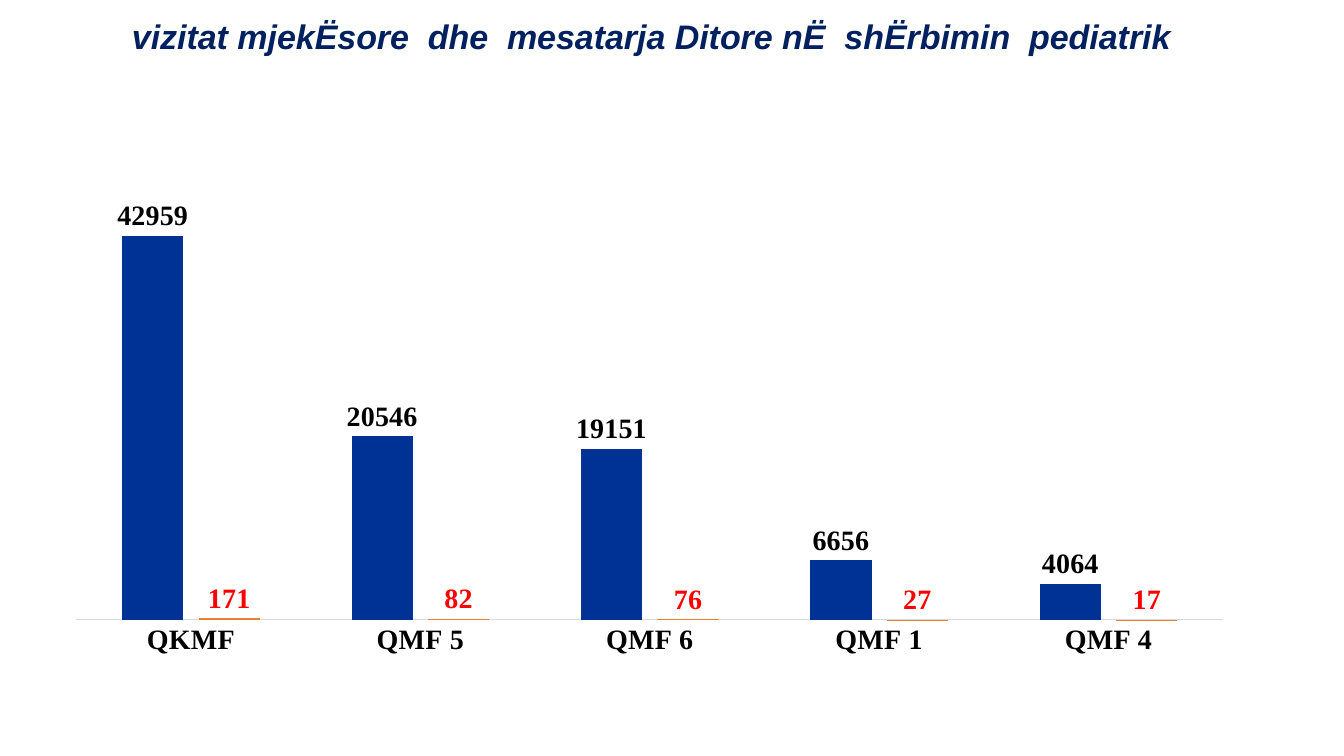
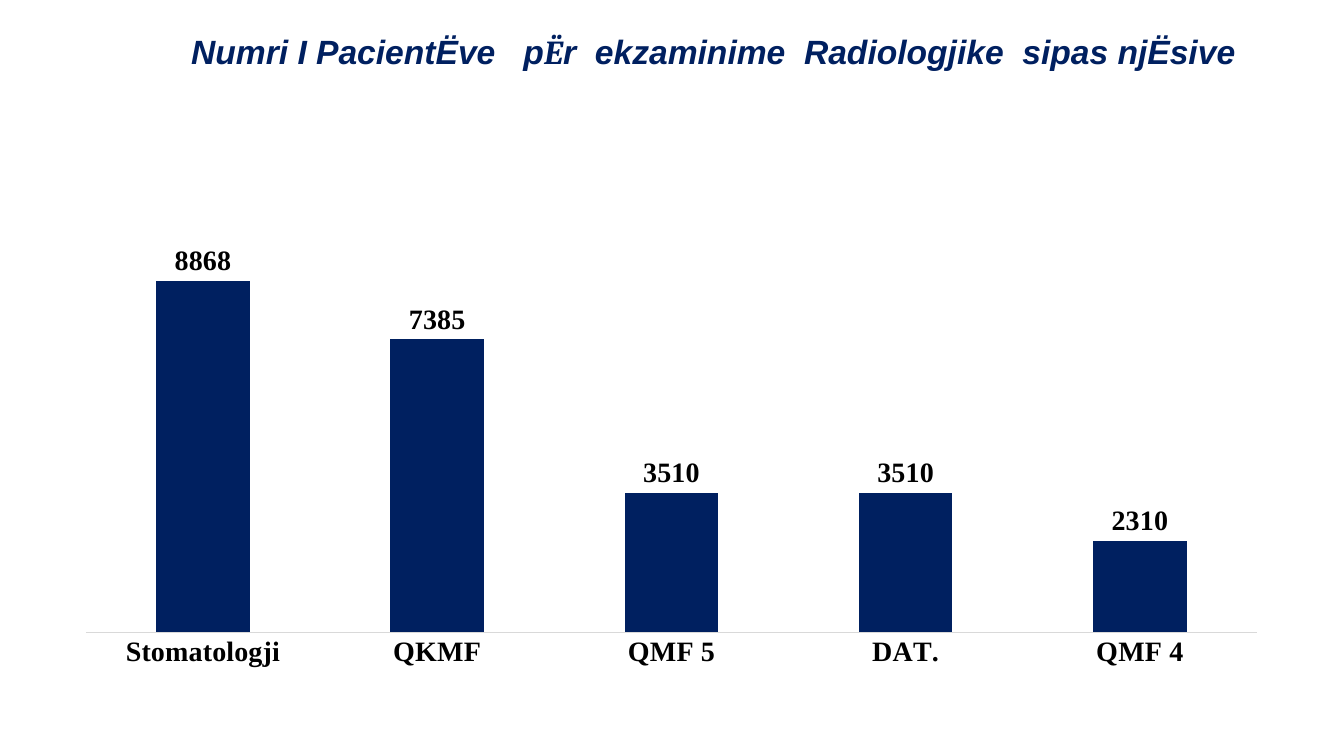
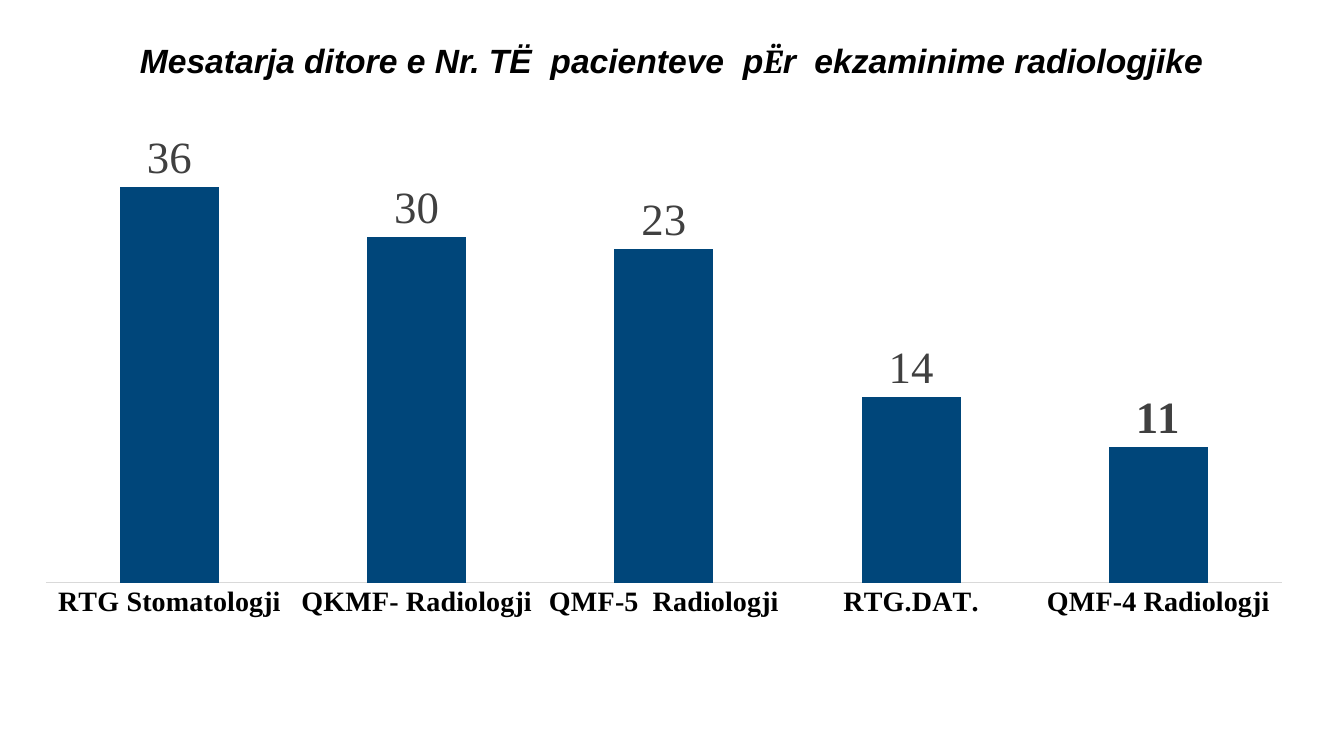
"""Build three slides of column charts on medical visits and radiology."""
from dataclasses import dataclass

from pptx import Presentation
from pptx import util as u
from pptx.chart.data import CategoryChartData
from pptx.dml.color import RGBColor
from pptx.enum import chart as ch, text as tx
from pptx.oxml import parse_xml
from pptx.oxml.ns import nsdecls, qn

HUES = {
    "navy": "002060",
    "royal": "003296",
    "steel": "00467A",
    "orange": "ED7D31",
    "red": "FF0000",
    "black": "000000",
    "gray": "404040",
    "rule": "D9D9D9",
}
SERIF = "Times New Roman"
Box = tuple[float, float, float, float]


@dataclass
class Title:
    box: Box
    runs: tuple[tuple[str, str], ...]
    hue: str = "navy"
    size: float = 24
    space: float = 0.9
    top: bool = False


@dataclass
class Series:
    vals: tuple[int, ...]
    hue: str
    ink: str = "black"
    size: int = 20
    marks: tuple[str, ...] = ()


@dataclass
class Graph:
    box: Box
    plot: Box
    peak: int
    cats: tuple[str, ...]
    rows: tuple[Series, ...]


@dataclass
class Page:
    title: Title
    graph: Graph


PAGES = (
    Page(
        Title((0, 0.2, 13.02, 0.59),
              (("vizitat mjekËsore  dhe  mesatarja Ditore nË  shËrbimin  pediatrik ", "Arial"),),
              size=24.3, top=True),
        Graph((0.52, 1.62, 11.85, 4.98), (0.02, 0.02, 0.96, 0.89), 50000,
              ("QKMF", "QMF 5", "QMF 6", "QMF 1", "QMF 4"),
              (Series((42959, 20546, 19151, 6656, 4064), "royal"),
               Series((171, 82, 76, 27, 17), "orange", "red"))),
    ),
    Page(
        Title((0.82, 0.3, 12.51, 0.46),
              (("Numri I PacientËve   p", "Arial"), ("Ë", "Cambria"),
               ("r  ekzaminime  Radiologjike  sipas njËsive", "Arial"))),
        Graph((0.61, 2.25, 12.1, 4.47), (0.02, 0.02, 0.96, 0.88), 10000,
              ("Stomatologji", "QKMF", "QMF 5", "DAT.", "QMF 4"),
              (Series((8868, 7385, 3510, 3510, 2310), "navy"),)),
    ),
    Page(
        Title((0.28, 0.35, 12.76, 0.5),
              (("Mesatarja ditore e Nr. TË  pacienteve  p", "Arial"), ("Ë", "Cambria"),
               ("r  ekzaminime radiologjike", "Arial")),
              hue="black", space=1),
        Graph((0.2, 1.33, 12.77, 4.89), (0.02, 0.03, 0.96, 0.88), 35,
              ("RTG Stomatologji", "QKMF- Radiologji", "QMF-5  Radiologji",
               "RTG.DAT.", "QMF-4 Radiologji"),
              (Series((32, 28, 27, 15, 11), "steel", "gray", 32,
                      ("36", "30", "23", "14")),)),
    ),
)


def place(box: Box) -> list[u.Length]:
    """Turn a box in inches into lengths."""
    return [u.Inches(n) for n in box]


def style(font, face: str, size: float, hue: str, bold: bool = True) -> None:
    """Set the face, size, colour and weight of a font."""
    font.name, font.size, font.bold = face, u.Pt(size), bold
    font.color.rgb = RGBColor.from_string(HUES[hue])


def add_title(slide, title: Title) -> None:
    """Write the centred italic title."""
    frame = slide.shapes.add_textbox(*place(title.box)).text_frame
    frame.word_wrap = True
    frame.vertical_anchor = tx.MSO_ANCHOR.MIDDLE
    if title.top:
        frame.vertical_anchor = tx.MSO_ANCHOR.TOP
        frame.margin_top = u.Inches(0)
    para = frame.paragraphs[0]
    para.alignment = tx.PP_ALIGN.CENTER
    para.line_spacing = title.space
    for words, face in title.runs:
        run = para.add_run()
        run.text = words
        style(run.font, face, title.size, title.hue)
        run.font.italic = True


def fix_plot(chart, plot: Box) -> None:
    """Pin the inner plot area to fractions of the chart."""
    area = chart.element.find(".//" + qn("c:plotArea"))
    for old in area.findall(qn("c:layout")):
        area.remove(old)
    modes = "".join(f'<c:{k}Mode val="edge"/>' for k in "xy")
    sizes = "".join(f'<c:{k} val="{n}"/>' for k, n in zip("xywh", plot))
    area.insert(0, parse_xml(
        f'<c:layout {nsdecls("c")}><c:manualLayout><c:layoutTarget val="inner"/>'
        f'{modes}{sizes}</c:manualLayout></c:layout>'))


def add_labels(bars, row: Series) -> None:
    """Colour a series and label its columns."""
    bars.format.fill.solid()
    bars.format.fill.fore_color.rgb = RGBColor.from_string(HUES[row.hue])
    bars.invert_if_negative = False
    labels = bars.data_labels
    labels.show_value = True
    labels.number_format, labels.number_format_is_linked = "0", False
    labels.position = ch.XL_LABEL_POSITION.OUTSIDE_END
    style(labels.font, SERIF, row.size, row.ink)
    for i, mark in enumerate(row.marks):
        label = bars.points[i].data_label
        run = label.text_frame.paragraphs[0].add_run()
        run.text = mark
        style(run.font, SERIF, row.size, row.ink, bold=False)
        label.position = ch.XL_LABEL_POSITION.OUTSIDE_END


def add_graph(slide, graph: Graph) -> None:
    """Draw the column chart."""
    data = CategoryChartData()
    data.categories = graph.cats
    for i, row in enumerate(graph.rows, 1):
        data.add_series(f"Series {i}", row.vals)
    chart = slide.shapes.add_chart(
        ch.XL_CHART_TYPE.COLUMN_CLUSTERED, *place(graph.box), data).chart
    chart.has_title = chart.has_legend = False
    style(chart.font, "Calibri", 10, "black", bold=False)

    scale = chart.value_axis
    scale.visible = scale.has_major_gridlines = False
    scale.minimum_scale, scale.maximum_scale = 0, graph.peak

    base = chart.category_axis
    base.major_tick_mark = base.minor_tick_mark = ch.XL_TICK_MARK.NONE
    base.format.line.color.rgb = RGBColor.from_string(HUES["rule"])
    base.format.line.width = u.Pt(0.75)
    style(base.tick_labels.font, SERIF, 20, "black")

    plot = chart.plots[0]
    plot.gap_width, plot.overlap = 150, -25
    plot.vary_by_categories = False
    for bars, row in zip(plot.series, graph.rows):
        add_labels(bars, row)
    fix_plot(chart, graph.plot)


def main() -> None:
    """Build and save the deck."""
    deck = Presentation()
    deck.slide_width, deck.slide_height = u.Inches(13.33), u.Inches(7.5)
    for page in PAGES:
        slide = deck.slides.add_slide(deck.slide_layouts[6])
        add_title(slide, page.title)
        add_graph(slide, page.graph)
    deck.save("out.pptx")


if __name__ == "__main__":
    main()
